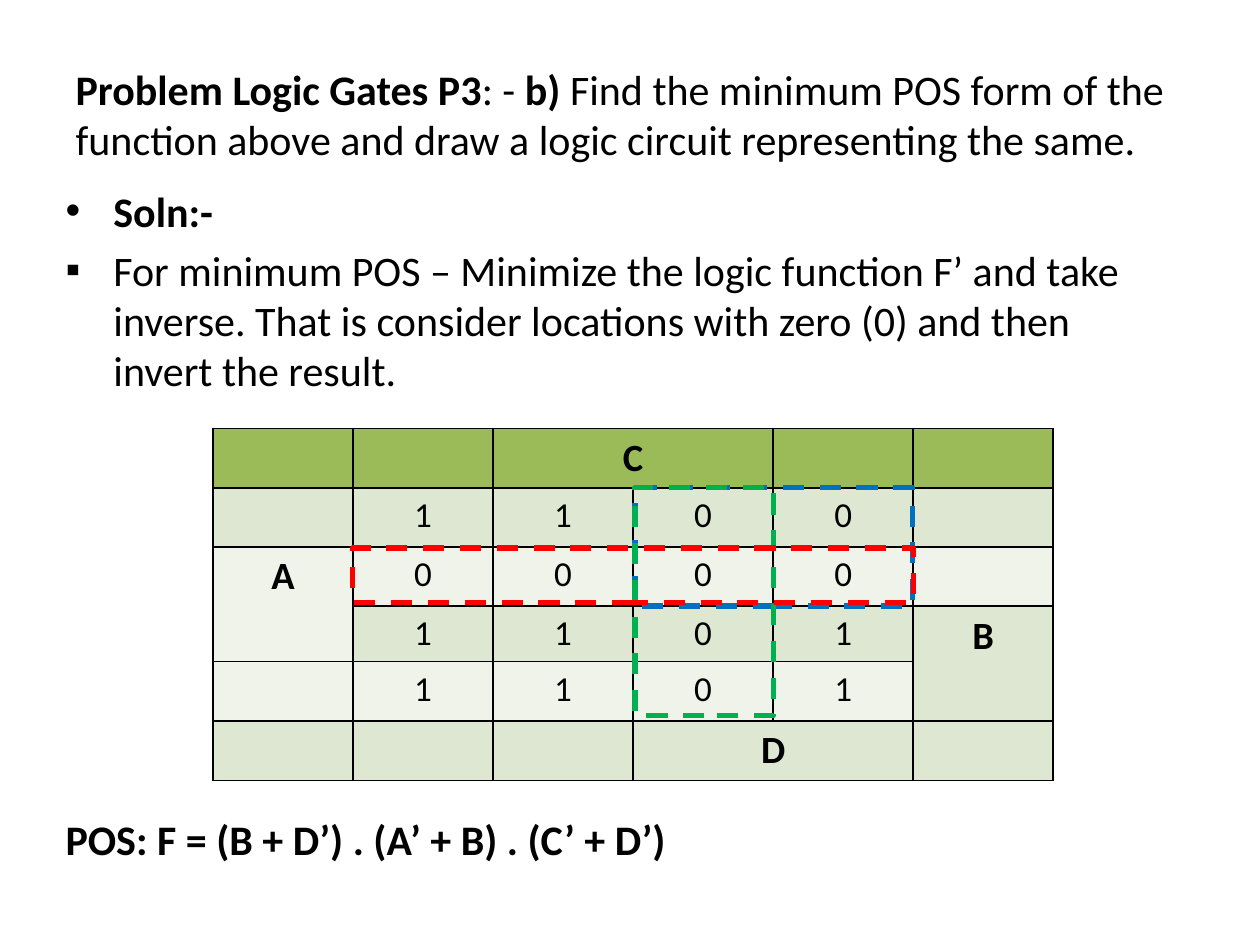
from dataclasses import dataclass
from lxml.etree import SubElement
from pptx import Presentation
from pptx.dml.color import RGBColor
from pptx.enum.dml import MSO_LINE
from pptx.enum.shapes import MSO_SHAPE
from pptx.enum.text import MSO_ANCHOR, MSO_AUTO_SIZE, PP_ALIGN
from pptx.oxml import parse_xml
from pptx.oxml.ns import nsdecls, qn
from pptx.util import Inches, Pt


@dataclass(frozen=True)
class Theme:
    font: str = "Calibri"
    ink: str = "000000"
    head: str = "9BBB59"
    bands: tuple = ("DEE7D1", "EFF3EA")
    blue: str = "0070C0"
    green: str = "00B050"
    red: str = "FF0000"
    text: int = 24
    label: int = 22
    digit: int = 20


class Board:
    def __init__(self, deck, theme):
        self.theme = theme
        self.slide = deck.slides.add_slide(deck.slide_layouts[1])

    def style(self, run, size, bold):
        run.font.name = self.theme.font
        run.font.size = Pt(size)
        run.font.bold = bold
        run.font.color.rgb = RGBColor.from_string(self.theme.ink)

    def place(self, shape, box):
        shape.left, shape.top, shape.width, shape.height = map(Inches, box)
        shape.text_frame.auto_size = MSO_AUTO_SIZE.NONE
        shape.text_frame.word_wrap = True
        return shape.text_frame

    def title(self, box, parts):
        frame = self.place(self.slide.shapes.title, box)
        frame.vertical_anchor = MSO_ANCHOR.MIDDLE
        para = frame.paragraphs[0]
        para.alignment = PP_ALIGN.LEFT
        for text, bold in parts:
            run = para.add_run()
            run.text = text
            self.style(run, self.theme.text, bold)

    def body(self, box, items):
        frame = self.place(self.slide.placeholders[1], box)
        frame.text = "\n".join(item[0] for item in items)
        for para, (_, bold, mark, gap) in zip(frame.paragraphs, items):
            self.style(para.runs[0], self.theme.text, bold)
            if gap:
                para.space_before = Pt(gap)
            self.bullet(para, mark)

    def bullet(self, para, mark):
        props = para._p.get_or_add_pPr()
        indent = Inches(0.38) if mark else 0
        props.set("marL", str(indent))
        props.set("indent", str(-indent))
        if mark:
            SubElement(props, qn("a:buFont")).set("typeface", "Arial")
            SubElement(props, qn("a:buChar")).set("char", mark)
        else:
            SubElement(props, qn("a:buNone"))

    def table(self, box, rows, heights, spans):
        count = len(rows[0])
        table = self.slide.shapes.add_table(
            len(rows), count, *map(Inches, box)).table
        table.first_row = table.horz_banding = False
        for row, height in zip(table.rows, heights):
            row.height = Inches(height)
        for col in table.columns:
            col.width = Inches(box[2] / count)
        for r, row in enumerate(rows):
            fill = self.theme.bands[(r + 1) % 2] if r else self.theme.head
            for c, text in enumerate(row):
                self.cell(table.cell(r, c), text.strip(), fill)
        for start, end in spans:
            table.cell(*start).merge(table.cell(*end))

    def cell(self, cell, text, fill):
        cell.fill.solid()
        cell.fill.fore_color.rgb = RGBColor.from_string(fill)
        props = cell._tc.get_or_add_tcPr()
        for i, side in enumerate("LRTB"):
            props.insert(i, parse_xml(
                f'<a:ln{side} w="{Pt(1)}" {nsdecls("a")}><a:solidFill>'
                f'<a:srgbClr val="{self.theme.ink}"/></a:solidFill></a:ln{side}>'))
        if text:
            cell.text_frame.text = text
            para = cell.text_frame.paragraphs[0]
            para.alignment = PP_ALIGN.CENTER
            bold = text.isalpha()
            size = self.theme.label if bold else self.theme.digit
            self.style(para.runs[0], size, bold)

    def loop(self, box, color):
        shape = self.slide.shapes.add_shape(
            MSO_SHAPE.RECTANGLE, *map(Inches, box))
        shape.shadow.inherit = False
        shape.fill.background()
        shape.line.color.rgb = RGBColor.from_string(color)
        shape.line.width = Pt(3)
        shape.line.dash_style = MSO_LINE.DASH


def main():
    deck = Presentation()
    deck.slide_width, deck.slide_height = Inches(10), Inches(7.5)
    theme = Theme()
    board = Board(deck, theme)
    board.body((0.42, 1.42, 8.92, 5.67), [
        ("Soln:-", True, "•", None),
        ("For minimum POS – Minimize the logic function F’ and take inverse. "
         "That is consider locations with zero (0) and then invert the result.",
         False, "▪", None),
        ("POS: F = (B + D’) . (A’ + B) . (C’ + D’)", True, None, 239),
    ])
    board.title((0.5, 0.3, 9.08, 1.2), [
        ("Problem Logic Gates P3", True),
        (": - ", False),
        ("b) ", True),
        ("Find the minimum POS form of the function above and draw "
         "a logic circuit representing the same.", False),
    ])
    rows = ["  C   ", " 1100 ", "A0000 ", " 1101B", " 1101 ", "   D  "]
    heights = [0.47, 0.47, 0.47, 0.43, 0.47, 0.47]
    spans = [((0, 2), (0, 3)), ((2, 0), (3, 0)),
             ((3, 5), (4, 5)), ((5, 3), (5, 4))]
    board.table((1.69, 3.4, 6.67, 2.77), rows, heights, spans)
    board.loop((5.04, 3.87, 2.2, 0.94), theme.blue)
    board.loop((5.04, 3.87, 1.1, 1.81), theme.green)
    board.loop((2.8, 4.35, 4.45, 0.43), theme.red)
    deck.save("out.pptx")


if __name__ == "__main__":
    main()
